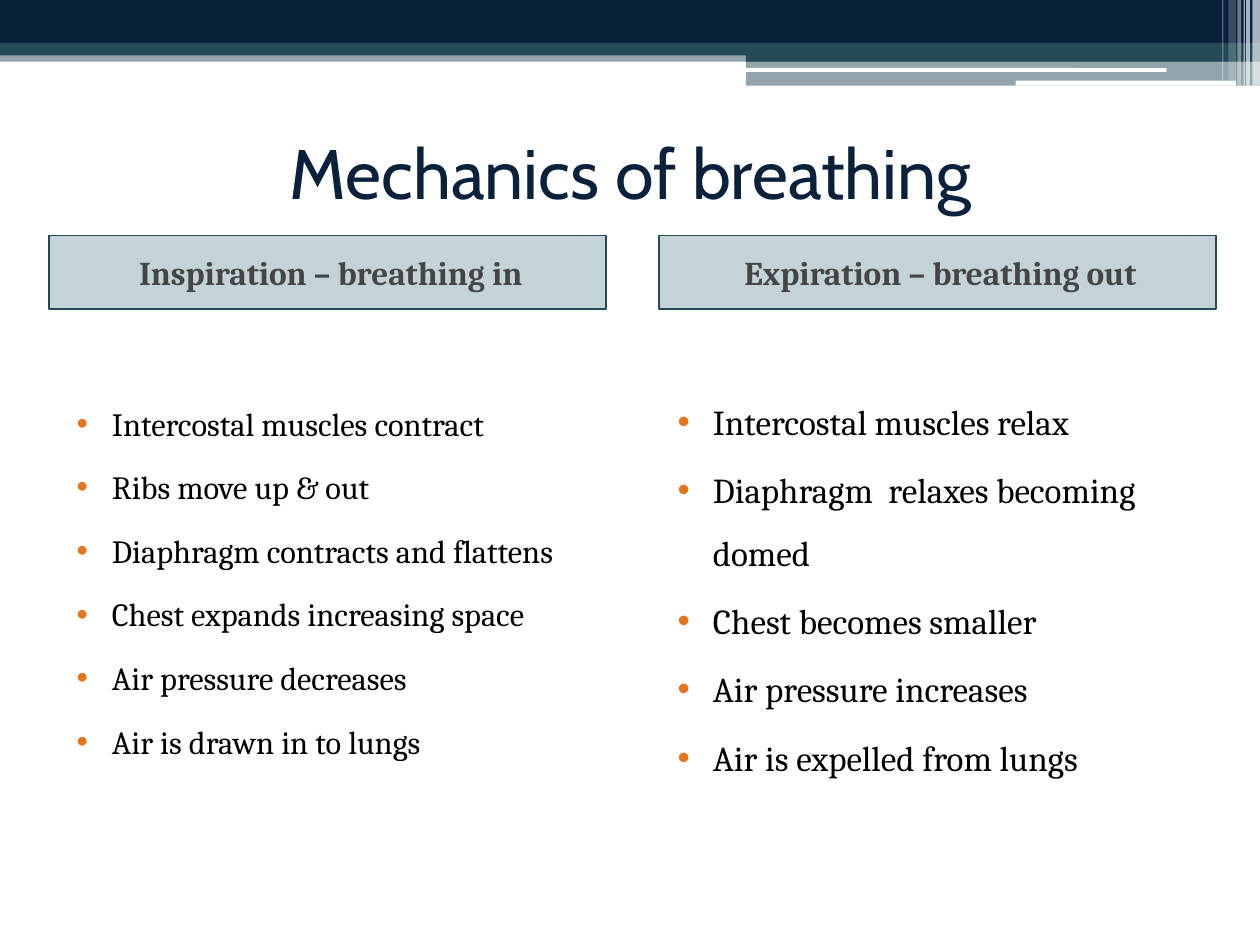
from pptx import Presentation
from pptx.dml.color import RGBColor
from pptx.enum.shapes import MSO_SHAPE
from pptx.enum.text import MSO_ANCHOR, PP_ALIGN
from pptx.oxml.ns import qn
from pptx.util import Inches, Pt
from lxml import etree

RECTANGLE = MSO_SHAPE.RECTANGLE
ROUNDED = MSO_SHAPE.ROUNDED_RECTANGLE
MIDDLE = MSO_ANCHOR.MIDDLE
TOP = MSO_ANCHOR.TOP
CENTER = PP_ALIGN.CENTER
NAVY = "09213B"
TEAL = "244A58"
WHITE = "FFFFFF"

deck = Presentation()
deck.slide_width = Inches(10)
deck.slide_height = Inches(7.5)
page = deck.slides.add_slide(deck.slide_layouts[6])


def add_block(kind, left, top, width, height, color, opacity=100):
    block = page.shapes.add_shape(kind, Inches(left), Inches(top), Inches(width), Inches(height))
    block.shadow.inherit = False
    block.fill.solid()
    block.fill.fore_color.rgb = RGBColor.from_string(color)
    block.line.fill.background()
    if opacity < 100:
        color_node = block.element.spPr.find(qn("a:solidFill"))[0]
        etree.SubElement(color_node, qn("a:alpha"), val=str(opacity * 1000))
    return block


def add_text(para, text, size, color, font="Cambria", bold=False):
    span = para.add_run()
    span.text = text
    span.font.name = font
    span.font.size = Pt(size)
    span.font.bold = bold
    span.font.color.rgb = RGBColor.from_string(color)


bands = [
    (0, 0.4, 10, 0.09, TEAL, 50),
    (0, 0, 10, 0.34, NAVY, 100),
    (0, 0.34, 10, 0.1, TEAL, 100),
    (5.92, 0.39, 4.08, 0.1, TEAL, 100),
    (5.92, 0.48, 4.08, 0.2, TEAL, 50),
]
for band in bands:
    add_block(RECTANGLE, *band)

for left, top, width, height in [(5.91, 0.54, 3.35, 0.03), (8.06, 0.64, 1.75, 0.04)]:
    add_block(ROUNDED, left, top, width, height, WHITE)

stripes = [
    (9.94, 0.06, 0.68, 65),
    (9.89, 0.03, 0.68, 65),
    (9.87, 0.01, 0.68, 60),
    (9.82, 0.03, 0.68, 40),
    (9.75, 0.06, 0.64, 20),
    (9.7, 0.01, 0.64, 30),
]
for left, width, height, opacity in stripes:
    add_block(RECTANGLE, left, 0, width, height, WHITE, opacity)

title = page.shapes.add_textbox(Inches(0.42), Inches(0.78), Inches(9.17), Inches(1.17))
title.text_frame.word_wrap = True
title.text_frame.vertical_anchor = MIDDLE
para = title.text_frame.paragraphs[0]
para.alignment = CENTER
add_text(para, "Mechanics of breathing", 40, NAVY, "Cabin")

for left, heading in [(0.39, "Inspiration – breathing in"), (5.23, "Expiration – breathing out")]:
    box = add_block(RECTANGLE, left, 1.87, 4.42, 0.58, "175065", 25)
    box.line.color.rgb = RGBColor.from_string(TEAL)
    box.line.width = Pt(1)
    box.text_frame.word_wrap = True
    box.text_frame.vertical_anchor = MIDDLE
    para = box.text_frame.paragraphs[0]
    para.alignment = CENTER
    para.space_before = Pt(3)
    para._p.get_or_add_pPr().set("marL", str(Inches(0.05)))
    add_text(para, heading, 19, "454545", bold=True)

columns = [
    (0.39, 3, 3.91, 18.5, [
        "Intercostal muscles contract",
        "Ribs move up & out",
        "Diaphragm contracts and flattens",
        "Chest expands increasing space",
        "Air pressure decreases",
        "Air is drawn in to lungs",
    ]),
    (5.16, 2.96, 4.25, 20, [
        "Intercostal muscles relax",
        "Diaphragm  relaxes becoming domed",
        "Chest becomes smaller",
        "Air pressure increases",
        "Air is expelled from lungs",
    ]),
]
for left, top, height, size, points in columns:
    box = page.shapes.add_textbox(Inches(left), Inches(top), Inches(4.42), Inches(height))
    frame = box.text_frame
    frame.word_wrap = True
    frame.vertical_anchor = TOP
    for index, point in enumerate(points):
        para = frame.add_paragraph() if index else frame.paragraphs[0]
        para.line_spacing = 1.5
        para.space_before = Pt(3)
        properties = para._p.get_or_add_pPr()
        properties.set("marL", str(Inches(0.4)))
        properties.set("indent", str(Inches(-0.28)))
        bullet_color = etree.SubElement(properties, qn("a:buClr"))
        etree.SubElement(bullet_color, qn("a:srgbClr"), val="E2751D")
        etree.SubElement(properties, qn("a:buFont"), typeface="Arial")
        etree.SubElement(properties, qn("a:buChar"), char="•")
        add_text(para, point, size, "000000")

deck.save("out.pptx")
